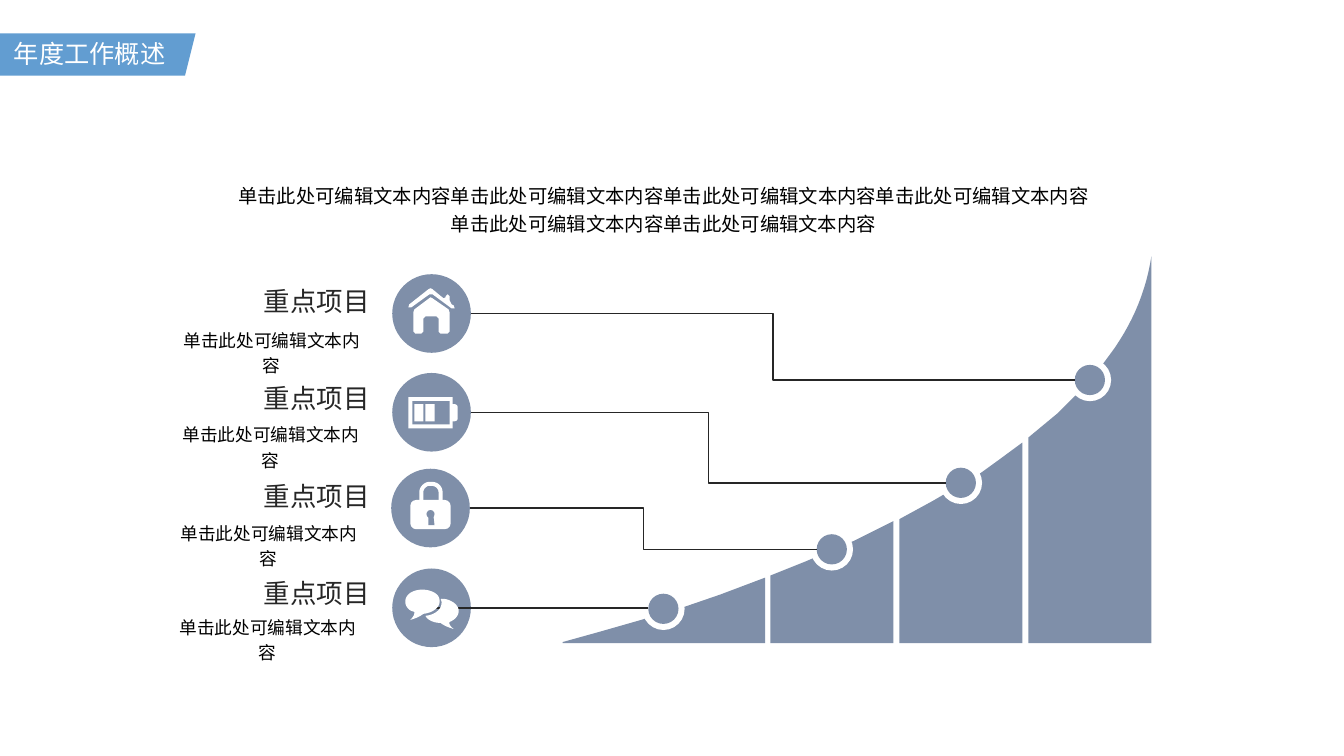
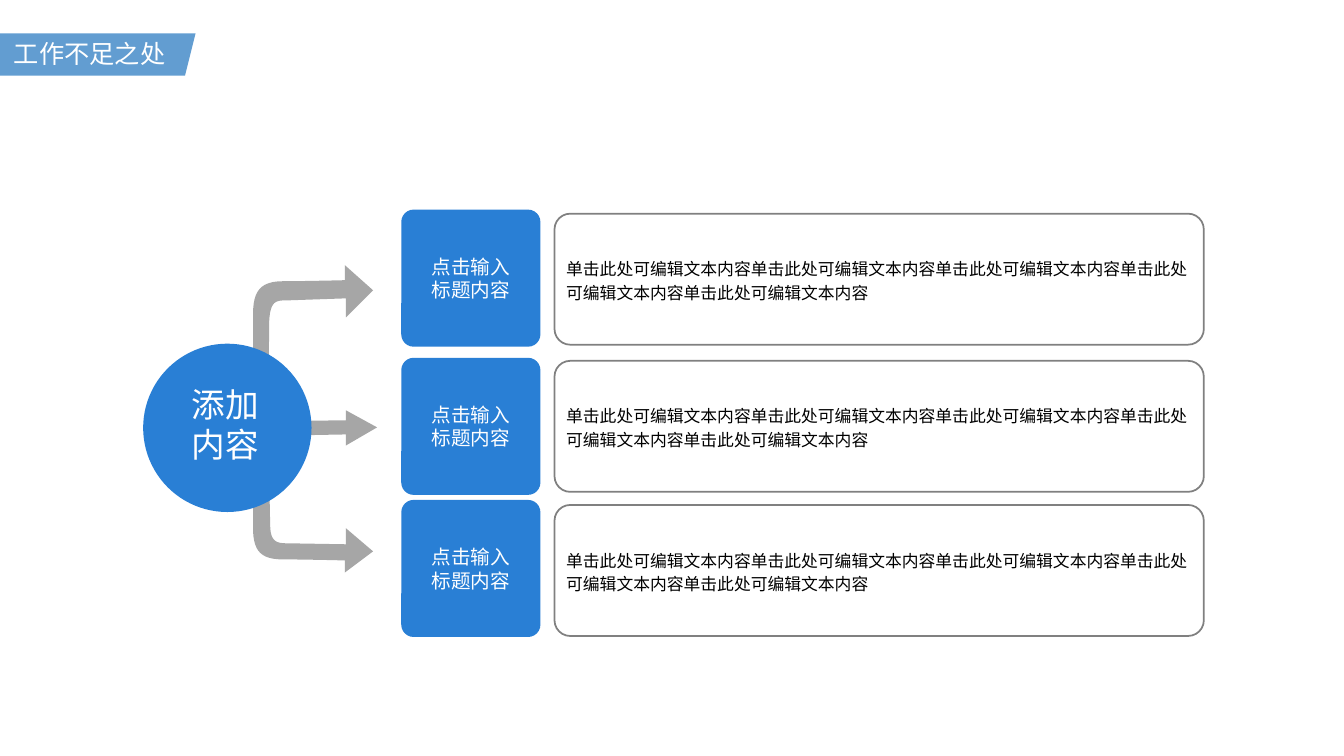
from dataclasses import dataclass

from lxml.etree import SubElement
from pptx import Presentation
from pptx.dml.color import RGBColor
from pptx.enum.shapes import MSO_CONNECTOR, MSO_SHAPE
from pptx.enum.text import MSO_ANCHOR, PP_ALIGN
from pptx.oxml.ns import qn
from pptx.util import Pt

PX = 9144  # 100 px to the inch


@dataclass(frozen=True)
class Theme:
    band: str = "629DD1"
    slate: str = "7F8FA9"
    blue: str = "297FD5"
    grey: str = "A6A6A6"
    edge: str = "808080"
    dark: str = "262626"
    black: str = "000000"
    white: str = "FFFFFF"
    head: str = "Arial"
    body: str = "Noto Sans CJK JP"
    # size and, for body text, line pitch in points
    title: tuple = (18, None)
    topic: tuple = (18.9, None)
    card: tuple = (14, None)
    hub: tuple = (24, None)
    intro: tuple = (13.8, 20)
    item: tuple = (12.6, 18)
    note: tuple = (12, 17)


T = Theme()
LEFT, MID, RIGHT = PP_ALIGN.LEFT, PP_ALIGN.CENTER, PP_ALIGN.RIGHT


def put(slide, kind, box, fill=None, edge=None, adj=None, text="", type=T.title,
        font=T.head, color=T.white, align=LEFT, pad=(9, 5, 9, 5)):
    """Add a preset shape, or a text box when kind is None."""
    area = [v * PX for v in box]
    if kind is None:
        shape = slide.shapes.add_textbox(*area)
    else:
        shape = slide.shapes.add_shape(kind, *area)
        shape.shadow.inherit = False
        if fill:
            shape.fill.solid()
            shape.fill.fore_color.rgb = RGBColor.from_string(fill)
        else:
            shape.fill.background()
        if edge:
            shape.line.color.rgb = RGBColor.from_string(edge)
            shape.line.width = Pt(1.25)
        else:
            shape.line.fill.background()
        if adj is not None:
            shape.adjustments[0] = adj
    if not text:
        return
    frame = shape.text_frame
    frame.word_wrap = True
    frame.vertical_anchor = MSO_ANCHOR.MIDDLE if kind else MSO_ANCHOR.TOP
    (frame.margin_left, frame.margin_top,
     frame.margin_right, frame.margin_bottom) = [v * PX for v in pad]
    size, pitch = type
    frame.text = text
    for para in frame.paragraphs:
        para.alignment = align
        para.font.name = font
        para.font.size = Pt(size)
        para.font.color.rgb = RGBColor.from_string(color)
        SubElement(para.font._element, qn("a:ea"), typeface=font)
        if pitch:
            para.line_spacing = Pt(pitch)


def trace(slide, fill, start, *steps):
    """Fill an outline; a step is a point or, with six numbers, a Bezier curve."""
    dots = [start]
    for step in steps:
        if len(step) == 2:
            dots.append(step)
            continue
        ax, ay = dots[-1]
        bx, by, cx, cy, dx, dy = step
        for n in range(1, 13):
            t = n / 12
            u = 1 - t
            w = (u ** 3, 3 * u * u * t, 3 * u * t * t, t ** 3)
            dots.append((w[0] * ax + w[1] * bx + w[2] * cx + w[3] * dx,
                         w[0] * ay + w[1] * by + w[2] * cy + w[3] * dy))
    dots = [(x * PX, y * PX) for x, y in dots]
    pen = slide.shapes.build_freeform(*dots[0], scale=1.0)
    pen.add_line_segments(dots[1:], close=True)
    shape = pen.convert_to_shape()
    shape.shadow.inherit = False
    shape.fill.solid()
    shape.fill.fore_color.rgb = RGBColor.from_string(fill)
    shape.line.fill.background()


deck = Presentation()
deck.slide_width, deck.slide_height = 1333 * PX, 750 * PX
pages = []
for title in ("年度工作概述", "工作不足之处"):
    page = deck.slides.add_slide(deck.slide_layouts[6])
    put(page, MSO_SHAPE.PARALLELOGRAM, (-53, 33, 247, 42), T.band)
    put(page, None, (4, 33, 181, 41), text=title, pad=(10, 5, 10, 5))
    pages.append(page)
growth, gaps = pages
line = "单击此处可编辑文本内容"

# Growth curve, cut into four slices
base = 638
slices = (
    ((558, 637), (594, 627), (636, 615), (679, 602), (714, 590), (759, 573)),
    ((764, 571), (799, 557), (846, 537), (886, 517)),
    ((892, 515), (925, 497), (973, 469), (991, 456), (1014, 439)),
    ((1020, 434), (1049, 410), (1067, 392), (1094, 361), (1105, 346),
     (1125, 317, 1137, 287, 1142, 254)),
)
for top in slices:
    trace(growth, T.slate, (top[0][0], base), *top, (top[-1][-2], base))

# Each row: icon disc, dot on the curve, topic top, item corner
rows = (
    ((389, 272), (1066, 362), 278, (164, 318)),
    ((389, 370), (938, 464), 374, (163, 412)),
    ((388, 465), (810, 530), 471, (161, 510)),
    ((389, 564), (643, 589), 568, (160, 603)),
)
disc, dot, ring = 78, 30, 6
for (x, y), (dx, dy), top, (tx, ty) in rows:
    put(growth, MSO_SHAPE.OVAL, (x, y, disc, disc), T.slate)
    put(growth, MSO_SHAPE.OVAL,
        (dx - ring, dy - ring, dot + 2 * ring, dot + 2 * ring), T.white)
    put(growth, MSO_SHAPE.OVAL, (dx, dy, dot, dot), T.slate)
    if (x, y) == rows[-1][0]:
        kind, ends = MSO_CONNECTOR.STRAIGHT, (dx, 603, 432, 603)
    else:
        kind = MSO_CONNECTOR.ELBOW
        ends = (x + disc, y + disc // 2, dx, dy + dot // 2)
    link = growth.shapes.add_connector(kind, *[v * PX for v in ends])
    link.line.color.rgb = RGBColor.from_string(T.dark)
    link.line.width = Pt(1)
    SubElement(link._element.spPr, qn("a:effectLst"))
    put(growth, None, (250, top, 126, 41), text="重点项目", type=T.topic,
        color=T.dark, align=RIGHT)
    put(growth, None, (tx + 3, ty, 205, 60), text=line, type=T.item,
        font=T.body, color=T.black, align=MID)

put(growth, None, (160, 173, 996, 65), text=f"{line * 4}\n{line * 2}",
    type=T.intro, font=T.body, color=T.black, align=MID)

# House icon
trace(growth, T.white, (429, 296), (427, 295), (411, 307), (410, 310),
      (410, 329), (412, 331), (418, 331), (420, 329), (420, 316), (422, 314),
      (433, 314), (435, 316), (435, 329), (437, 331), (444, 331), (446, 329),
      (446, 310), (445, 307))
trace(growth, T.white, (448, 302), (446, 298), (446, 294), (444, 292),
      (442, 294), (442, 295), (440, 296), (429, 287), (427, 286), (425, 287),
      (406, 302), (405, 305), (408, 305), (426, 292), (429, 292), (448, 306),
      (451, 306), (450, 303))

# Battery icon
put(growth, MSO_SHAPE.ROUNDED_RECTANGLE, (444, 401, 10, 17), T.white, adj=0.3)
for box, fill in (((405, 394, 44, 31), T.white), ((409, 398, 37, 23), T.slate),
                  ((411, 401, 9, 17), T.white), ((422, 401, 9, 17), T.white)):
    put(growth, MSO_SHAPE.RECTANGLE, box, fill)

# Padlock icon
trace(growth, T.white, (416, 497), (416, 488), (416, 483, 421, 478, 426, 478),
      (428, 478), (435, 478, 439, 483, 439, 488), (439, 497), (435, 497),
      (435, 488), (435, 485, 432, 482, 428, 482), (426, 482),
      (423, 482, 420, 485, 420, 488), (420, 497))
put(growth, MSO_SHAPE.ROUNDED_RECTANGLE, (407, 496, 40, 29), T.white, adj=0.2)
put(growth, MSO_SHAPE.OVAL, (423, 506, 8, 8), T.slate)
trace(growth, T.slate, (425, 512), (430, 512), (431, 521), (425, 521))

# Speech bubbles icon
trace(growth, T.white, (455, 606), (455, 600, 447, 594, 438, 594), (437, 595),
      (438, 596, 438, 597, 438, 598), (438, 605, 431, 610, 422, 611),
      (424, 615, 430, 618, 437, 618), (442, 622, 450, 624, 450, 624),
      (446, 621, 445, 618, 446, 617), (451, 615, 455, 611, 455, 606))
trace(growth, T.white, (435, 592), (433, 588, 426, 585, 419, 585),
      (409, 585, 402, 590, 402, 597), (402, 601, 405, 606, 411, 607),
      (411, 609, 411, 611, 407, 615), (407, 615, 415, 613, 420, 609),
      (429, 608, 436, 603, 436, 597), (436, 595, 436, 594, 435, 592))

# Arrows from the hub to the three cards
trace(gaps, T.grey, (266, 422), (268, 521), (268, 538, 275, 539, 285, 539),
      (343, 540), (343, 524), (370, 547), (342, 568), (342, 556),
      (342, 556, 303, 555, 281, 555), (259, 555, 252, 547, 251, 527), (251, 420))
trace(gaps, T.grey, (233, 433), (343, 431), (343, 442), (374, 424), (343, 407),
      (343, 417), (232, 418))
trace(gaps, T.grey, (266, 433), (267, 319), (268, 298, 274, 298, 285, 298),
      (343, 296), (343, 315), (370, 288), (342, 263), (342, 278),
      (342, 278, 303, 279, 281, 279), (258, 279, 251, 289, 251, 312), (251, 435))
put(gaps, MSO_SHAPE.OVAL, (142, 341, 167, 167), T.blue, text="添加\n内容",
    type=T.hub, align=MID, pad=(0, 0, 4, 8))

for card, note in ((208, 212), (355, 358), (496, 501)):
    put(gaps, MSO_SHAPE.ROUNDED_RECTANGLE, (398, card, 138, 136), T.blue,
        adj=0.09, text="点击输入标题内容", type=T.card, align=MID,
        pad=(20, 0, 20, 0))
    put(gaps, MSO_SHAPE.ROUNDED_RECTANGLE, (550, note, 644, 130), edge=T.edge,
        adj=0.12, text=line * 5, type=T.note, font=T.body, color=T.black,
        pad=(7, 3, 7, 3))

deck.save("out.pptx")
